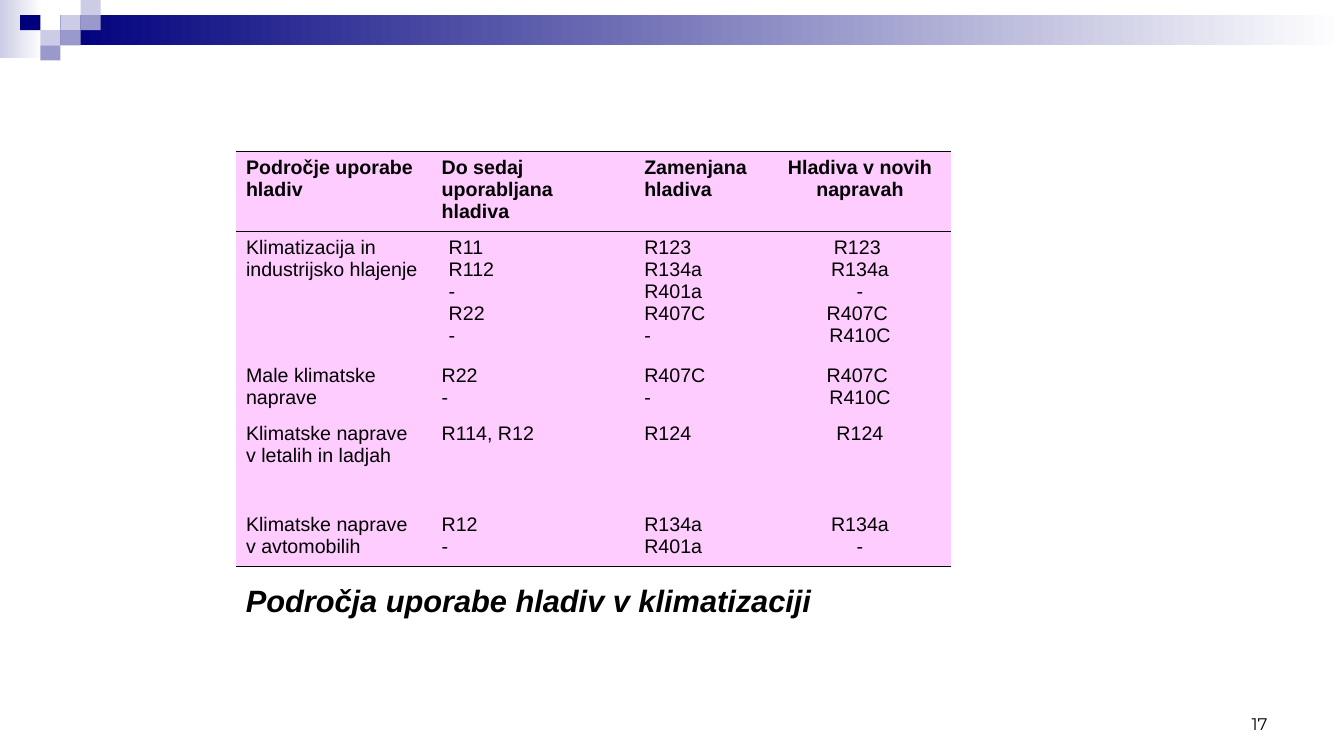
from lxml import etree
from pptx import Presentation
from pptx.dml.color import RGBColor
from pptx.enum.shapes import MSO_SHAPE
from pptx.enum.text import MSO_ANCHOR, PP_ALIGN
from pptx.oxml.ns import qn
from pptx.util import Inches, Pt

RECT = MSO_SHAPE.RECTANGLE
LEFT, CENTER, RIGHT = PP_ALIGN.LEFT, PP_ALIGN.CENTER, PP_ALIGN.RIGHT
MIDDLE, BOTTOM = MSO_ANCHOR.MIDDLE, MSO_ANCHOR.BOTTOM
COLORS = {
    "navy": "00007D", "violet": "9999CC", "lavender": "CCCCE6",
    "pink": "FFCCFF", "white": "FFFFFF", "black": "000000",
}
RULE_WIDTH = Pt(1)


def color(name):
    return RGBColor.from_string(COLORS[name])


def add_span(para, text, size, font="Arial", bold=False, italic=False):
    span = para.add_run()
    span.text = text
    span.font.size = Pt(size)
    span.font.name = font
    span.font.bold = bold
    span.font.italic = italic
    span.font.color.rgb = color("black")


deck = Presentation()
deck.slide_width, deck.slide_height = Inches(13.33), Inches(7.5)
page = deck.slides.add_slide(deck.slide_layouts[6])

# Header band and mosaic: two names make a gradient
header_shapes = [
    (0, 0, 0.42, 0.58, ["lavender", "white"]),
    (0.6, 0.15, 12.73, 0.3, ["navy", "white"]),
]
mosaic = [
    (3, 1, "lavender"), (4, 0, "lavender"), (4, 1, "violet"),
    (2, 2, "lavender"), (1, 1, "navy"), (3, 2, "violet"), (2, 3, "violet"),
]
for column, row, name in mosaic:
    header_shapes.append((column * 0.2, row * 0.15, 0.2, 0.15, [name]))
for left, top, width, height, names in header_shapes:
    block = page.shapes.add_shape(
        RECT, Inches(left), Inches(top), Inches(width), Inches(height))
    block.shadow.inherit = False
    block.line.fill.background()
    if len(names) == 1:
        block.fill.solid()
        block.fill.fore_color.rgb = color(names[0])
    else:
        block.fill.gradient()
        block.fill.gradient_angle = 0
        for stop, name in zip(block.fill.gradient_stops, names):
            stop.color.rgb = color(name)

# Refrigerant table: each cell is a list of paragraphs
column_widths = [1.94, 2.01, 1.34, 1.8]
row_heights = [0.82, 0.8, 1.27, 0.57, 0.91, 0.57, 0.82]
blank_row = [[], [], [], []]
HEADER_ROW, FIRST_BODY_ROW = 1, 2
rows = [
    blank_row,
    [["Področje uporabe hladiv"], ["Do sedaj uporabljana hladiva"],
     ["Zamenjana hladiva"], ["Hladiva v novih napravah"]],
    [["Klimatizacija in industrijsko hlajenje"],
     ["R11", "R112", "-", "R22", "-"],
     ["R123", "R134a R401a R407C", "-"],
     ["R123 ", "R134a", "-", "R407C ", "R410C"]],
    [["Male klimatske naprave"], ["R22", "-"], ["R407C", "-"],
     ["R407C ", "R410C"]],
    [["Klimatske naprave v letalih in ladjah"], ["R114, R12"], ["R124"],
     ["R124"]],
    [["Klimatske naprave v avtomobilih"], ["R12", "-"], ["R134a R401a"],
     ["R134a", "-"]],
    blank_row,
]
ruled_tops = {1, 2, 6}  # rows with a line along their top edge
table = page.shapes.add_table(
    len(rows), len(column_widths), Inches(2.34), Inches(0.68),
    Inches(sum(column_widths)), Inches(sum(row_heights))).table
table.first_row = False
table.horz_banding = False
for column, width in zip(table.columns, column_widths):
    column.width = Inches(width)
for r, (row, height) in enumerate(zip(rows, row_heights)):
    table.rows[r].height = Inches(height)
    for c, texts in enumerate(row):
        cell = table.cell(r, c)
        for i, text in enumerate(texts):
            frame = cell.text_frame
            para = frame.paragraphs[0] if i == 0 else frame.add_paragraph()
            para.alignment = CENTER if c == 3 else LEFT
            if (r, c) == (FIRST_BODY_ROW, 1):
                properties = para._p.get_or_add_pPr()
                properties.set("marL", str(Inches(0.07)))
                properties.set("indent", "0")
            add_span(para, text, 14, bold=r == HEADER_ROW)

        # Borders come before the fill in the cell properties
        borders = cell._tc.get_or_add_tcPr()
        ruled = {"lnL": False, "lnR": False,
                 "lnT": r in ruled_tops, "lnB": r + 1 in ruled_tops}
        for side, visible in ruled.items():
            edge = etree.SubElement(borders, qn("a:" + side))
            if visible:
                edge.set("w", str(RULE_WIDTH))
                paint = etree.SubElement(edge, qn("a:solidFill"))
                etree.SubElement(paint, qn("a:srgbClr"), val=COLORS["black"])
            else:
                etree.SubElement(edge, qn("a:noFill"))
        cell.fill.solid()
        cell.fill.fore_color.rgb = color("pink" if any(row) else "white")

# Caption
box = page.shapes.add_textbox(
    Inches(2.34), Inches(5.72), Inches(5.83), Inches(0.47))
box.text_frame.word_wrap = False
box.text_frame.vertical_anchor = MIDDLE
add_span(box.text_frame.paragraphs[0], "Področja uporabe hladiv v klimatizaciji",
         22, bold=True, italic=True)

# Page number
box = page.shapes.add_textbox(
    Inches(9.56), Inches(6.83), Inches(3.11), Inches(0.5))
box.text_frame.word_wrap = True
box.text_frame.vertical_anchor = BOTTOM
para = box.text_frame.paragraphs[0]
para.alignment = RIGHT
add_span(para, "17", 12, font="Montserrat")

deck.save("out.pptx")
